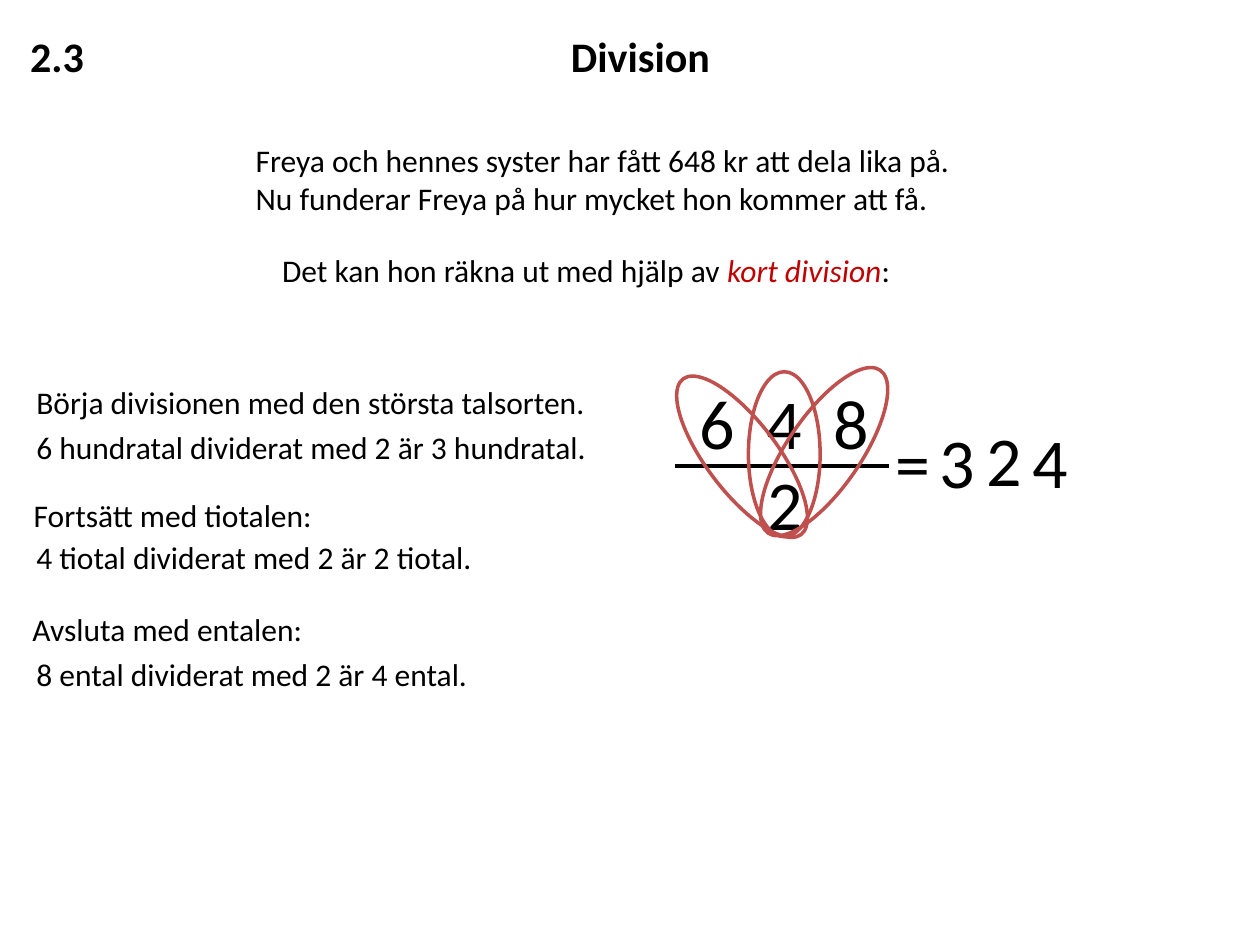
from dataclasses import dataclass

from lxml import etree
from pptx import Presentation
from pptx.dml.color import RGBColor
from pptx.enum.shapes import MSO_CONNECTOR, MSO_SHAPE
from pptx.enum.text import MSO_ANCHOR, MSO_AUTO_SIZE, PP_ALIGN
from pptx.oxml.ns import qn
from pptx.util import Pt

ELLIPSE = MSO_SHAPE.OVAL
STRAIGHT = MSO_CONNECTOR.STRAIGHT
FIT_SHAPE = MSO_AUTO_SIZE.SHAPE_TO_FIT_TEXT
NO_FIT = MSO_AUTO_SIZE.NONE
TOP = MSO_ANCHOR.TOP
LEFT = PP_ALIGN.LEFT
TITLE_ONLY = 5


@dataclass(frozen=True)
class Theme:
    font: str = "Calibri"
    ink: RGBColor = RGBColor(0x00, 0x00, 0x00)
    term: RGBColor = RGBColor(0xC0, 0x00, 0x00)
    ring: RGBColor = RGBColor(0xC0, 0x50, 0x4D)
    title_size: int = 24
    body_size: int = 18
    digit_size: int = 40


THEME = Theme()

STEPS = [
    ("Börja divisionen med den största talsorten.", 13.7, 215.3),
    ("6 hundratal dividerat med 2 är 3 hundratal.", 13.7, 241.2),
    ("Fortsätt med tiotalen:", 12.2, 280.1),
    ("4 tiotal dividerat med 2 är 2 tiotal.", 13.7, 303.8),
    ("Avsluta med entalen:", 11.5, 344.9),
    ("8 ental dividerat med 2 är 4 ental.", 13.7, 370.8),
]
RESULT = [
    ("=", 504.7, 236.2),
    ("3", 529.9, 235.4),
    ("2", 556.6, 234.7),
    ("4", 583.2, 235.4),
]
RINGS = [
    ((403.9, 205.2, 40.3, 111.6), 322.8),
    ((427.7, 212.4, 41, 94.3), 0),
    ((450, 201.6, 41.8, 113), 34.5),
]


def style(paragraph, size, bold=False):
    paragraph.alignment = LEFT
    font = paragraph.font
    font.name = THEME.font
    font.size = Pt(size)
    font.bold = bold
    font.color.rgb = THEME.ink


def set_tabs(paragraph, *positions):
    properties = paragraph._p.get_or_add_pPr()
    tabs = etree.Element(qn("a:tabLst"))
    for position in positions:
        etree.SubElement(tabs, qn("a:tab"), pos=str(Pt(position)), algn="l")
    properties.insert_element_before(tabs, "a:defRPr", "a:extLst")


def add_title(slide, number, heading):
    title = slide.shapes.title
    title.left, title.top, title.width, title.height = map(Pt, (10, 13.7, 700, 36))
    frame = title.text_frame
    frame.auto_size = NO_FIT
    frame.vertical_anchor = TOP
    frame.text = f"{number}\t{heading}"
    style(frame.paragraphs[0], THEME.title_size, bold=True)
    set_tabs(frame.paragraphs[0], 309)


def add_text(slide, text, left, top, width, height, size):
    box = slide.shapes.add_textbox(*map(Pt, (left, top, width, height)))
    frame = box.text_frame
    frame.word_wrap = True
    frame.auto_size = FIT_SHAPE
    paragraph = frame.paragraphs[0]
    paragraph.text = text
    style(paragraph, size)
    return paragraph


def add_sentence(slide, text, left, top, width=360, height=29):
    return add_text(slide, text, left, top, width, height, THEME.body_size)


def add_digits(slide, text, left, top, width=33):
    return add_text(slide, text, left, top, width, 55.4, THEME.digit_size)


def add_method(slide):
    sentence = add_sentence(slide, "Det kan hon räkna ut med hjälp av ", 154.1, 139.7, 373)
    term = sentence.add_run()
    term.text = "kort division"
    term.font.italic = True
    term.font.color.rgb = THEME.term
    sentence.add_run().text = ":"


def add_fraction_bar(slide, start, end, y):
    bar = slide.shapes.add_connector(STRAIGHT, Pt(start), Pt(y), Pt(end), Pt(y))
    bar.line.color.rgb = THEME.ink
    bar.line.width = Pt(2.25)
    etree.SubElement(bar._element.spPr, qn("a:effectLst"))


def add_ring(slide, bounds, angle):
    ring = slide.shapes.add_shape(ELLIPSE, *map(Pt, bounds))
    ring.rotation = angle
    ring.shadow.inherit = False
    ring.fill.background()
    ring.line.color.rgb = THEME.ring
    ring.line.width = Pt(2)


def add_fraction(slide):
    numerator = add_digits(slide, "6\t4\t8", 392.4, 213.1, 161.3)
    set_tabs(numerator, 38.4, 76.8)
    add_digits(slide, "2", 431.3, 259.9, 45.4)
    add_fraction_bar(slide, 385.9, 508.3, 266.4)
    for bounds, angle in RINGS:
        add_ring(slide, bounds, angle)
    for symbol, left, top in RESULT:
        add_digits(slide, symbol, left, top)


def main():
    deck = Presentation()
    deck.slide_width, deck.slide_height = Pt(720), Pt(540)
    slide = deck.slides.add_slide(deck.slide_layouts[TITLE_ONLY])
    add_title(slide, "2.3", "Division")
    add_sentence(
        slide,
        "Freya och hennes syster har fått 648 kr att dela lika på. "
        "Nu funderar Freya på hur mycket hon kommer att få.",
        139, 77, 430, 51,
    )
    add_method(slide)
    for step, left, top in STEPS:
        add_sentence(slide, step, left, top)
    add_fraction(slide)
    deck.save("out.pptx")


if __name__ == "__main__":
    main()
